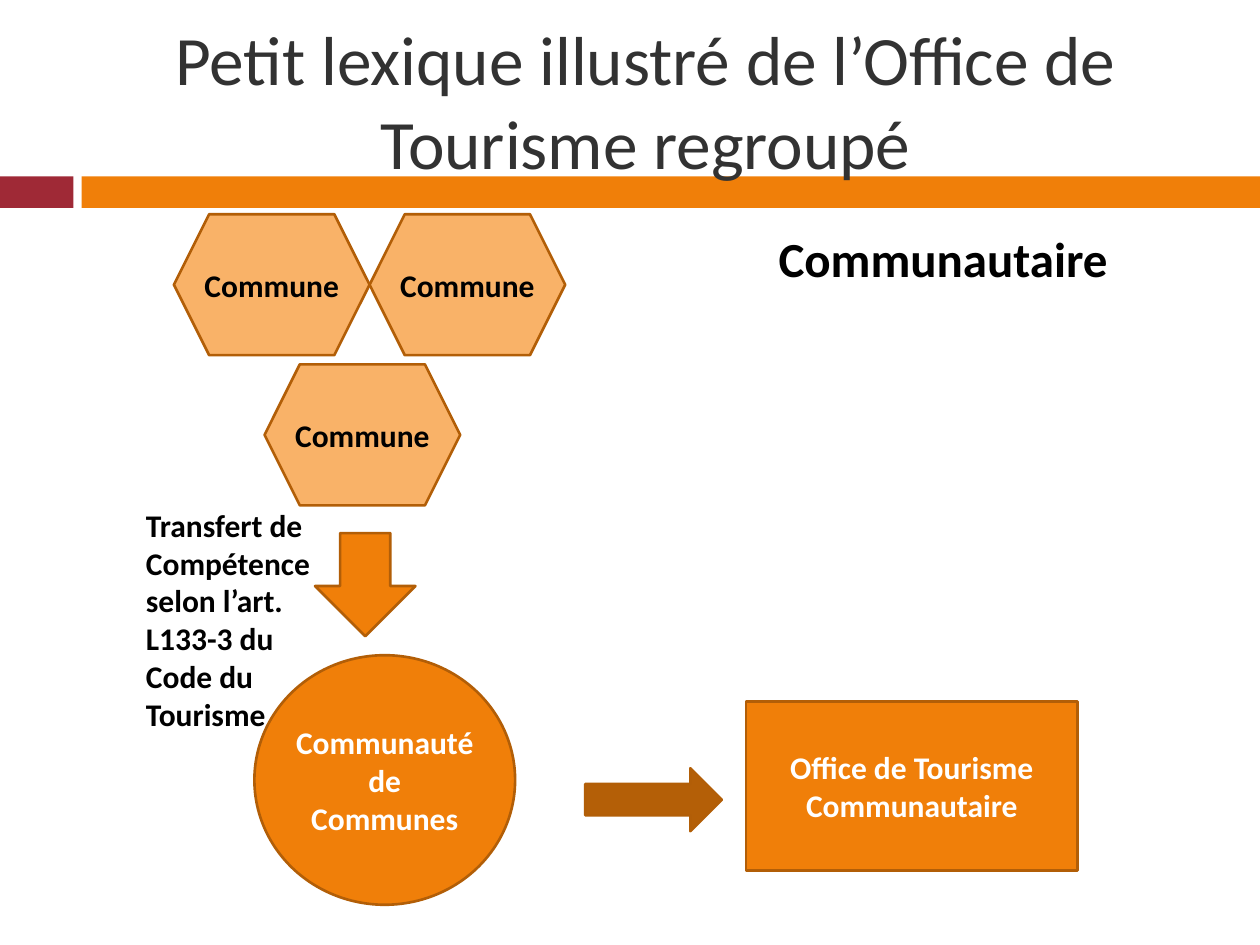
"""Build the slide on the shared tourist office and its communes."""
from pptx import Presentation
from pptx.dml.color import RGBColor
from pptx.enum.shapes import MSO_SHAPE
from pptx.enum.text import MSO_ANCHOR, PP_ALIGN
from pptx.util import Pt

COLORS = {
    "red": "9F2936",
    "orange": "F07F09",
    "peach": "F9B268",
    "brown": "B45F07",
    "edge": "B25E07",
    "title": "323232",
    "black": "000000",
    "white": "FFFFFF",
}


def color(name):
    """Return the named colour."""
    return RGBColor.from_string(COLORS[name])


def write(shape, text, size, ink, bold=True, align=PP_ALIGN.CENTER):
    """Put one styled paragraph in a shape."""
    frame = shape.text_frame
    frame.word_wrap = True
    frame.vertical_anchor = MSO_ANCHOR.MIDDLE
    frame.text = text
    para = frame.paragraphs[0]
    para.alignment = align
    font = para.runs[0].font
    font.name = "Calibri"
    font.size = Pt(size)
    font.bold = bold
    font.color.rgb = color(ink)


def shape(slide, kind, box, fill, edge=True):
    """Add a filled preset shape, with or without an outline."""
    item = slide.shapes.add_shape(kind, *map(Pt, box))
    item.shadow.inherit = False
    item.fill.solid()
    item.fill.fore_color.rgb = color(fill)
    if edge:
        item.line.color.rgb = color("edge")
        item.line.width = Pt(1.5)
    else:
        item.line.fill.background()
    return item


def tight(item):
    """Remove the text margins of a shape."""
    frame = item.text_frame
    frame.margin_left = frame.margin_right = 0
    frame.margin_top = frame.margin_bottom = 0


def label(slide, box, text, size, ink="black", bold=True, align=PP_ALIGN.LEFT):
    """Add a text box."""
    item = slide.shapes.add_textbox(*map(Pt, box))
    write(item, text, size, ink, bold, align)
    return item


def commune(slide, left, top):
    """Add one commune hexagon."""
    item = shape(slide, MSO_SHAPE.HEXAGON, (left, top, 111.8, 80.6), "peach")
    tight(item)
    write(item, "Commune", 18, "black")


def main():
    """Build and save the slide."""
    deck = Presentation()
    deck.slide_width, deck.slide_height = Pt(720), Pt(540)
    slide = deck.slides.add_slide(deck.slide_layouts[6])

    shape(slide, MSO_SHAPE.RECTANGLE, (0, 100.8, 42, 18), "red", False)
    shape(slide, MSO_SHAPE.RECTANGLE, (46.6, 100.8, 673.4, 18), "orange", False)
    label(slide, (48, 18, 642, 78),
          "Petit lexique illustré de l’Office de Tourisme regroupé",
          39.6, "title", False, PP_ALIGN.CENTER)

    for left, top in ((99.4, 122.4), (151.2, 208.2), (211.2, 122.4)):
        commune(slide, left, top)

    shape(slide, MSO_SHAPE.RIGHT_ARROW, (334.5, 439, 78, 36), "brown")
    office = shape(slide, MSO_SHAPE.RECTANGLE, (426.4, 401, 189.4, 96.5), "orange")
    write(office, "Office de Tourisme Communautaire", 18, "white")
    shape(slide, MSO_SHAPE.DOWN_ARROW, (180, 304.6, 57.4, 59), "orange")
    group = shape(slide, MSO_SHAPE.OVAL, (145.4, 374.4, 149, 142.6), "orange")
    tight(group)
    write(group, "Communauté de Communes", 18, "white")

    label(slide, (76.3, 288.7, 126, 130.3),
          "Transfert de Compétence selon l’art. L133-3 du Code du Tourisme", 18)
    head = label(slide, (437.8, 128.2, 205.9, 38.9), "Communautaire", 28)
    head.text_frame.word_wrap = False

    deck.save("out.pptx")


if __name__ == "__main__":
    main()
